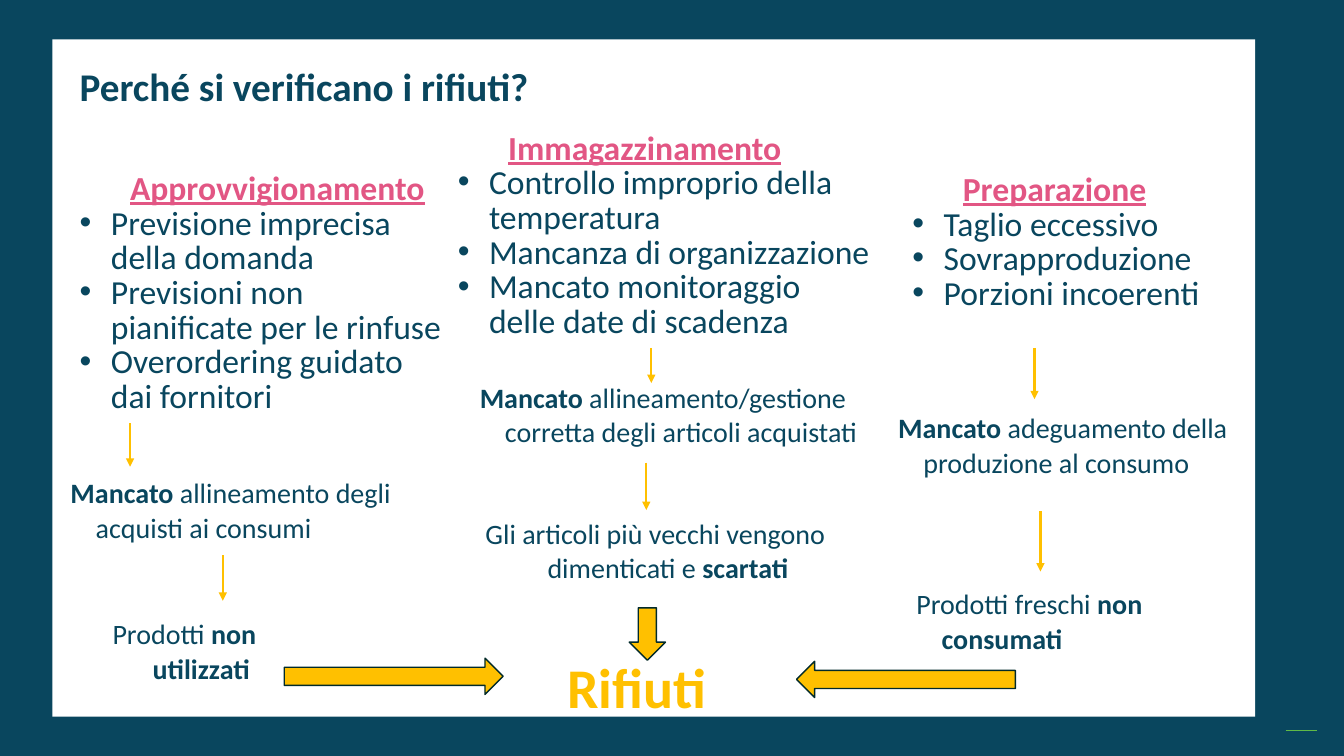
from typing import NamedTuple

from lxml.etree import SubElement
from pptx import Presentation
from pptx.dml.color import RGBColor
from pptx.enum.shapes import MSO_CONNECTOR, MSO_SHAPE
from pptx.enum.text import MSO_ANCHOR, MSO_AUTO_SIZE, PP_ALIGN as Align
from pptx.oxml.ns import qn
from pptx.util import Inches, Pt

COLORS = {"navy": "09465E", "white": "FFFFFF", "pink": "E25684",
          "gold": "FFC000", "green": "60BA47", "outline": "012A2A"}
FONT = "Calibri"
LINE_PITCH = Pt(24.8)


class Box(NamedTuple):
    left: float
    top: float
    width: float
    height: float


class Cause(NamedTuple):
    placeholder: int
    box: Box
    heading: str
    points: list[str]


class Effect(NamedTuple):
    box: Box
    spans: list[tuple[str, bool]]  # text, bold
    align: Align = Align.LEFT


class Step(NamedTuple):
    x: float
    top: float
    bottom: float


class BlockArrow(NamedTuple):
    box: Box
    rotation: int


CAUSES = [
    Cause(1, Box(0.69, 1.66, 3.83, 3.08), "Approvvigionamento",
          ["Previsione imprecisa della domanda",
           "Previsioni non pianificate per le rinfuse",
           "Overordering guidato dai fornitori"]),
    Cause(2, Box(4.44, 1.26, 4.29, 3.08), "Immagazzinamento",
          ["Controllo improprio della temperatura",
           "Mancanza di organizzazione",
           "Mancato monitoraggio delle date di scadenza"]),
    Cause(3, Box(8.95, 1.67, 3.45, 3.08), "Preparazione",
          ["Taglio eccessivo", "Sovrapproduzione", "Porzioni incoerenti"]),
]
EFFECTS = [
    Effect(Box(0.6, 4.66, 3.42, 0.88),
           [("Mancato ", True), ("allineamento degli acquisti ai consumi", False)]),
    Effect(Box(0.74, 6.06, 1.9, 0.88),
           [("Prodotti ", False), ("non utilizzati ", True)], Align.RIGHT),
    Effect(Box(4.66, 3.71, 4.02, 0.88),
           [("Mancato ", True),
            ("allineamento/gestione corretta degli articoli acquistati", False)]),
    Effect(Box(4.63, 5.06, 3.74, 0.88),
           [("Gli articoli più vecchi vengono dimenticati e ", False),
            ("scartati", True)], Align.CENTER),
    Effect(Box(8.81, 4.01, 3.67, 0.88),
           [("Mancato ", True), ("adeguamento della produzione al consumo", False)]),
    Effect(Box(8.99, 5.76, 3.45, 0.88),
           [("Prodotti freschi ", False), ("non consumati", True)]),
]
STEPS = [Step(1.29, 4.2, 4.63), Step(2.21, 5.51, 5.96), Step(6.46, 3.45, 3.8),
         Step(6.41, 4.59, 5.06), Step(10.26, 3.45, 3.96), Step(10.32, 5.07, 5.67)]
BLOCK_ARROWS = [BlockArrow(Box(7.9, 6.56, 2.17, 0.36), 180),
                BlockArrow(Box(2.82, 6.53, 2.17, 0.36), 0),
                BlockArrow(Box(6.16, 6.11, 0.52, 0.36), 90)]


def rgb(name: str) -> RGBColor:
    return RGBColor.from_string(COLORS[name])


def place(shape, box: Box) -> None:
    shape.left, shape.top, shape.width, shape.height = map(Inches, box)


def prepare_frame(shape):
    frame = shape.text_frame
    frame.word_wrap = True
    frame.auto_size = MSO_AUTO_SIZE.NONE
    frame.vertical_anchor = MSO_ANCHOR.TOP
    return frame


def style(para, size: int, color: str, bold: bool | None = None, spacing=LINE_PITCH,
          align: Align = Align.LEFT) -> None:
    para.alignment = align
    para.line_spacing = spacing
    para.space_before = Pt(0)
    font = para.font
    font.name, font.size, font.bold = FONT, Pt(size), bold
    font.color.rgb = rgb(color)


def hang(para, indent: float):
    props = para._p.get_or_add_pPr()
    props.set("marL", str(Inches(indent)))
    props.set("indent", str(-Inches(indent)))
    return props


def add_cause(slide, cause: Cause) -> None:
    shape = slide.placeholders[cause.placeholder]
    place(shape, cause.box)
    frame = prepare_frame(shape)
    # Heading: the underlined tab shifts the word to the right
    para = frame.paragraphs[0]
    para.text = "\t" + cause.heading
    props = hang(para, 0)
    SubElement(props, qn("a:buNone"))
    tabs = SubElement(props, qn("a:tabLst"))
    SubElement(tabs, qn("a:tab"), pos=str(Inches(0.38)), algn="l")
    style(para, 24, "pink", bold=True)
    para.font.underline = True
    # Bulleted reasons
    for point in cause.points:
        para = frame.add_paragraph()
        para.text = point
        props = hang(para, 0.31)
        SubElement(props, qn("a:buFont"), typeface="Arial")
        SubElement(props, qn("a:buChar"), char="•")
        style(para, 24, "navy", bold=False)


def add_effect(slide, effect: Effect) -> None:
    frame = prepare_frame(slide.shapes.add_textbox(*map(Inches, effect.box)))
    para = frame.paragraphs[0]
    hang(para, 0.25)
    style(para, 20, "navy", align=effect.align)
    for text, bold in effect.spans:
        span = para.add_run()
        span.text, span.font.bold = text, bold


def add_line(slide, start: tuple[float, float], end: tuple[float, float],
             color: str, width: float, arrow: bool = False) -> None:
    line = slide.shapes.add_connector(MSO_CONNECTOR.STRAIGHT, *map(Inches, start + end))
    line.line.color.rgb = rgb(color)
    line.line.width = Pt(width)
    if arrow:
        SubElement(line.line._get_or_add_ln(), qn("a:tailEnd"), type="triangle")
    SubElement(line._element.spPr, qn("a:effectLst"))


def add_block_arrow(slide, arrow: BlockArrow) -> None:
    shape = slide.shapes.add_shape(MSO_SHAPE.RIGHT_ARROW, *map(Inches, arrow.box))
    shape.rotation = arrow.rotation
    shape.shadow.inherit = False
    shape.fill.solid()
    shape.fill.fore_color.rgb = rgb("gold")
    shape.line.color.rgb = rgb("outline")
    shape.line.width = Pt(1)


def main() -> None:
    deck = Presentation()
    deck.slide_width, deck.slide_height = Inches(13.33), Inches(7.5)
    slide = deck.slides.add_slide(deck.slide_layouts.get_by_name("Comparison"))
    unused = slide.placeholders[4]._element
    unused.getparent().remove(unused)

    # Navy page with a white panel behind the text
    slide.background.fill.solid()
    slide.background.fill.fore_color.rgb = rgb("navy")
    panel = slide.shapes.add_shape(
        MSO_SHAPE.RECTANGLE, *map(Inches, Box(0.52, 0.39, 11.93, 6.72)))
    panel.shadow.inherit = False
    panel.fill.solid()
    panel.fill.fore_color.rgb = rgb("white")
    panel.line.fill.background()
    slide.shapes._spTree.insert(2, panel._element)
    add_line(slide, (12.75, 7.25), (13.06, 7.25), "green", 1)

    # Title
    title = slide.shapes.title
    place(title, Box(0.69, 0.62, 11.6, 0.6))
    para = prepare_frame(title).paragraphs[0]
    para.text = "Perché si verificano i rifiuti?"
    style(para, 28, "navy", bold=True, spacing=0.9)

    # Causes, their effects and the steps between them
    for cause in CAUSES:
        add_cause(slide, cause)
    for effect in EFFECTS:
        add_effect(slide, effect)
    for step in STEPS:
        add_line(slide, (step.x, step.top), (step.x, step.bottom), "gold", 1.5, arrow=True)

    # Common outcome
    outcome = slide.shapes.add_textbox(*map(Inches, Box(5.53, 6.5, 2, 0.8)))
    para = prepare_frame(outcome).paragraphs[0]
    para.text = "Rifiuti"
    style(para, 40, "gold", bold=True, spacing=0.9)
    for arrow in BLOCK_ARROWS:
        add_block_arrow(slide, arrow)

    deck.save("out.pptx")


if __name__ == "__main__":
    main()
